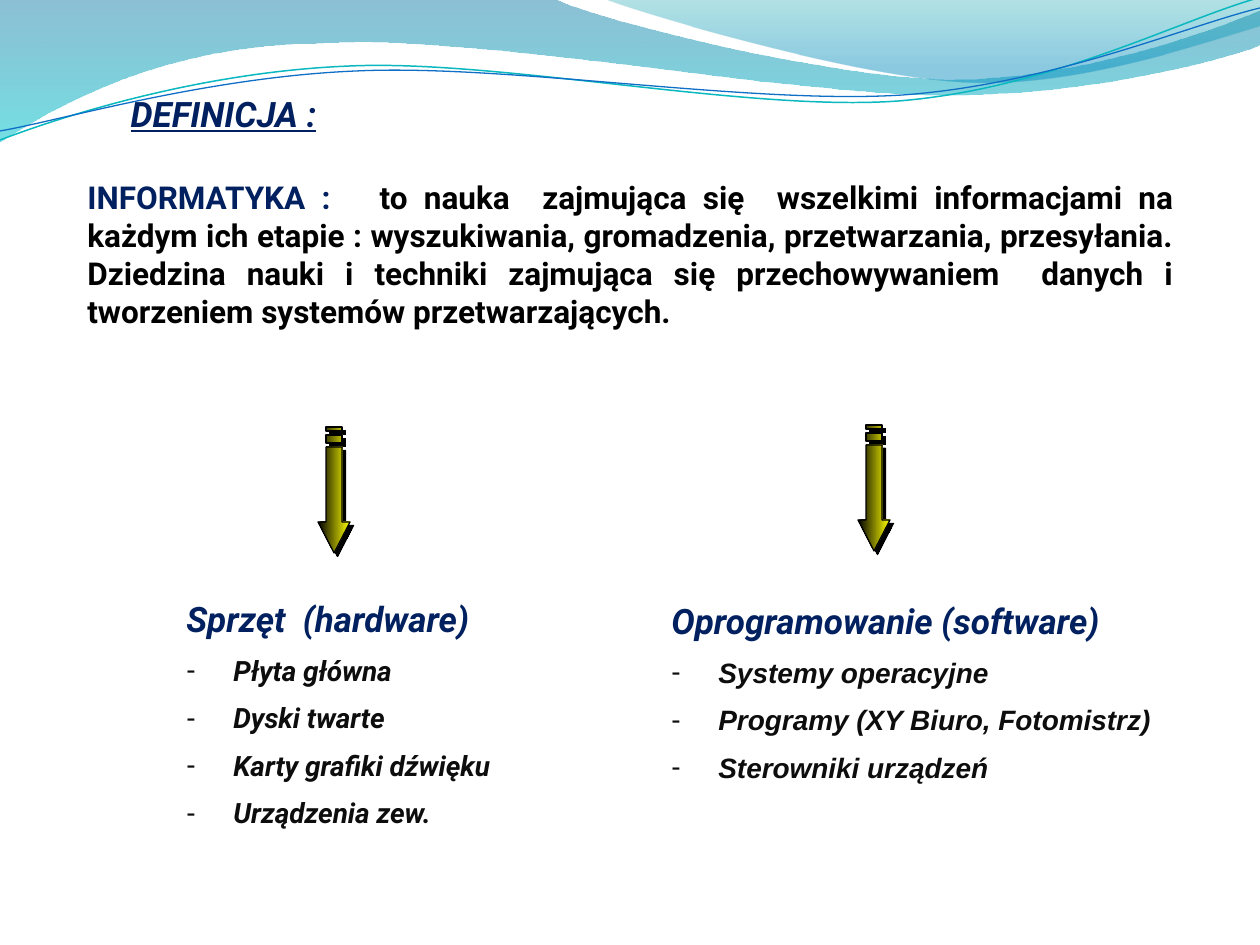
"""Build a slide that defines computer science and its two branches."""
from dataclasses import dataclass

from lxml import etree
from pptx import Presentation
from pptx.dml.color import RGBColor
from pptx.enum.text import MSO_ANCHOR, PP_ALIGN
from pptx.oxml.ns import qn
from pptx.util import Emu, Pt

EMU_PER_PX = 914400 / 126
TOP = MSO_ANCHOR.TOP
LEFT, JUSTIFY = PP_ALIGN.LEFT, PP_ALIGN.JUSTIFY
NAVY, BLACK, INK = "002060", "000000", "0D0D0D"
HEADING = {"name": "Roboto", "size": Pt(20), "bold": True, "italic": True}
TITLE = HEADING | {"underline": True}
BODY = {"name": "Roboto", "size": Pt(18), "bold": True}
ITEM = {"size": Pt(16), "bold": True, "italic": True}
ARROW_LENGTH, ARROW_THICKNESS = 126, 32
ARROW_CONTOURS = (
    ((95, 0), (95, 8), (20, 8), (20, 24), (95, 24), (95, 32), (126, 16)),
    ((8, 8), (8, 24), (16, 24), (16, 8)),
    ((0, 8), (0, 24), (4, 24), (4, 8)),
)


@dataclass(frozen=True)
class Stop:
    position: int
    color: str
    opacity: int = 100


@dataclass(frozen=True)
class Wave:
    start: tuple
    segments: tuple
    stops: tuple = ()
    line_color: str = ""
    line_width: float = 0


@dataclass(frozen=True)
class Branch:
    heading: str
    items: tuple
    box: tuple
    item_font: str
    arrow_center: tuple


WAVES = (
    Wave((0, -1), (
        (554, -1),
        (600, 21, 837, 79, 955, 79),
        (1075, 79, 1207, 33, 1260, 11),
        (1261, 45),
        (1239, 55, 1096, 96, 940, 95),
        (784, 94, 481, 35, 324, 43),
        (163, 44, 58, 105, -1, 142),
    ), (Stop(0, "0074A1", 45), Stop(100, "00C6CF", 55))),
    Wave((604, -1), (
        (641, 14, 859, 78, 969, 82),
        (1079, 87, 1211, 40, 1260, 26),
        (1260, 0),
    ), (Stop(0, "00A1A9", 30), Stop(80, "008BBF", 45))),
    Wave((0, 140), (
        (60, 117, 199, 72, 349, 66),
        (498, 59, 747, 112, 898, 101),
        (1050, 89, 1182, 19, 1258, -2),
    ), line_color="0AB8BF", line_width=0.85),
    Wave((0, 131), (
        (59, 121, 207, 77, 357, 71),
        (508, 64, 752, 105, 903, 95),
        (1053, 84, 1186, 26, 1260, 8),
    ), line_color="0F6FC6", line_width=0.75),
)
BRANCHES = (
    Branch("Oprogramowanie (software)",
           ("Systemy operacyjne", "Programy (XY Biuro, Fotomistrz)", "Sterowniki urządzeń"),
           (659, 593, 576, 208), "Arial", (874, 488)),
    Branch("Sprzęt  (hardware)",
           ("Płyta główna", "Dyski twarte", "Karty grafiki dźwięku", "Urządzenia zew."),
           (174, 591, 367, 258), "Roboto", (334, 490)),
)
DEFINITION = (
    "to nauka  zajmująca się  wszelkimi informacjami na każdym ich etapie : "
    "wyszukiwania, gromadzenia, przetwarzania, przesyłania. Dziedzina nauki i techniki "
    "zajmująca się przechowywaniem  danych i tworzeniem systemów przetwarzających."
)


def px(length: float) -> Emu:
    return Emu(round(length * EMU_PER_PX))


def rgb(color: str) -> RGBColor:
    return RGBColor.from_string(color)


def add_color(parent, color: str, opacity: int = 100) -> None:
    element = etree.SubElement(parent, qn("a:srgbClr"), val=color)
    if opacity < 100:
        etree.SubElement(element, qn("a:alpha"), val=str(opacity * 1000))


def set_gradient(shape, stops: tuple, angle: int) -> None:
    shape.fill.background()
    properties = shape._element.spPr
    gradient = etree.Element(qn("a:gradFill"), rotWithShape="0")
    stop_list = etree.SubElement(gradient, qn("a:gsLst"))
    for stop in stops:
        element = etree.SubElement(stop_list, qn("a:gs"), pos=str(stop.position * 1000))
        add_color(element, stop.color, stop.opacity)
    etree.SubElement(gradient, qn("a:lin"), ang=str(angle * 60000), scaled="0")
    properties.replace(properties.find(qn("a:noFill")), gradient)


def set_line(shape, color: str, width: float) -> None:
    shape.line.color.rgb = rgb(color)
    shape.line.width = Pt(width)


def add_outline(slide, contours: tuple, close: bool):
    """Add a freeform whose contours are sequences of px points."""
    first, *others = [[(px(x), px(y)) for x, y in contour] for contour in contours]
    builder = slide.shapes.build_freeform(*first[0])
    builder.add_line_segments(first[1:], close=close)
    for contour in others:
        builder.move_to(*contour[0])
        builder.add_line_segments(contour[1:], close=close)
    shape = builder.convert_to_shape()
    shape.shadow.inherit = False
    return shape


def bend_segments(shape, segments: tuple) -> None:
    """Turn each line that has control points into a cubic curve."""
    lines = list(shape._element.spPr.iter(qn("a:lnTo")))
    for line, segment in zip(lines, segments):
        if len(segment) == 6:
            curve = etree.Element(qn("a:cubicBezTo"))
            for x, y in zip(segment[::2], segment[1::2]):
                etree.SubElement(curve, qn("a:pt"), x=str(px(x) - shape.left),
                                 y=str(px(y) - shape.top))
            line.getparent().replace(line, curve)


def draw_wave(slide, wave: Wave) -> None:
    ends = [wave.start, *(segment[-2:] for segment in wave.segments)]
    shape = add_outline(slide, (ends,), bool(wave.stops))
    bend_segments(shape, wave.segments)
    if wave.stops:
        set_gradient(shape, wave.stops, 90)
        shape.line.fill.background()
    else:
        shape.fill.background()
        set_line(shape, wave.line_color, wave.line_width)


def draw_arrow(slide, center: tuple) -> None:
    shape = add_outline(slide, ARROW_CONTOURS, True)
    shape.left = px(center[0] - ARROW_LENGTH / 2)
    shape.top = px(center[1] - ARROW_THICKNESS / 2)
    shape.rotation = 90
    set_gradient(shape, (Stop(0, BLACK), Stop(100, "FFFF00")), 0)
    set_line(shape, BLACK, 0.75)
    effects = shape._element.spPr.find(qn("a:effectLst"))
    shadow = etree.SubElement(effects, qn("a:outerShdw"), dist=str(Pt(2.8)),
                              dir="2700000", algn="ctr", rotWithShape="0")
    add_color(shadow, BLACK)


def add_run(paragraph, text: str, color: str, formats: dict) -> None:
    run = paragraph.add_run()
    run.text = text
    for name, value in formats.items():
        setattr(run.font, name, value)
    run.font.color.rgb = rgb(color)


def add_text_box(slide, box: tuple):
    frame = slide.shapes.add_textbox(*map(px, box)).text_frame
    frame.word_wrap = True
    return frame


def draw_branch_text(slide, branch: Branch) -> None:
    frame = add_text_box(slide, branch.box)
    add_run(frame.paragraphs[0], branch.heading, NAVY, HEADING)
    for item in branch.items:
        paragraph = frame.add_paragraph()
        paragraph.space_before = Pt(8)
        properties = paragraph._p.get_or_add_pPr()
        properties.set("marL", str(px(47)))
        properties.set("indent", str(-px(47)))
        etree.SubElement(properties, qn("a:buFont"), typeface="Arial")
        etree.SubElement(properties, qn("a:buChar"), char="-")
        add_run(paragraph, item, INK, ITEM | {"name": branch.item_font})


def main() -> None:
    presentation = Presentation()
    presentation.slide_width, presentation.slide_height = px(1260), px(945)
    slide = presentation.slides.add_slide(presentation.slide_layouts[5])
    for wave in WAVES:
        draw_wave(slide, wave)
    draw_branch_text(slide, BRANCHES[0])
    paragraph = add_text_box(slide, (75, 172, 1111, 165)).paragraphs[0]
    paragraph.alignment = JUSTIFY
    add_run(paragraph, "INFORMATYKA :   ", NAVY, BODY)
    add_run(paragraph, DEFINITION, BLACK, BODY)
    title = slide.shapes.title
    title.left, title.top, title.width, title.height = map(px, (118, 86, 1082, 54))
    title.text_frame.vertical_anchor = TOP
    title.text_frame.paragraphs[0].alignment = LEFT
    add_run(title.text_frame.paragraphs[0], "DEFINICJA :", NAVY, TITLE)
    slide.shapes._spTree.append(title._element)
    draw_branch_text(slide, BRANCHES[1])
    for branch in BRANCHES:
        draw_arrow(slide, branch.arrow_center)
    presentation.save("out.pptx")


if __name__ == "__main__":
    main()
